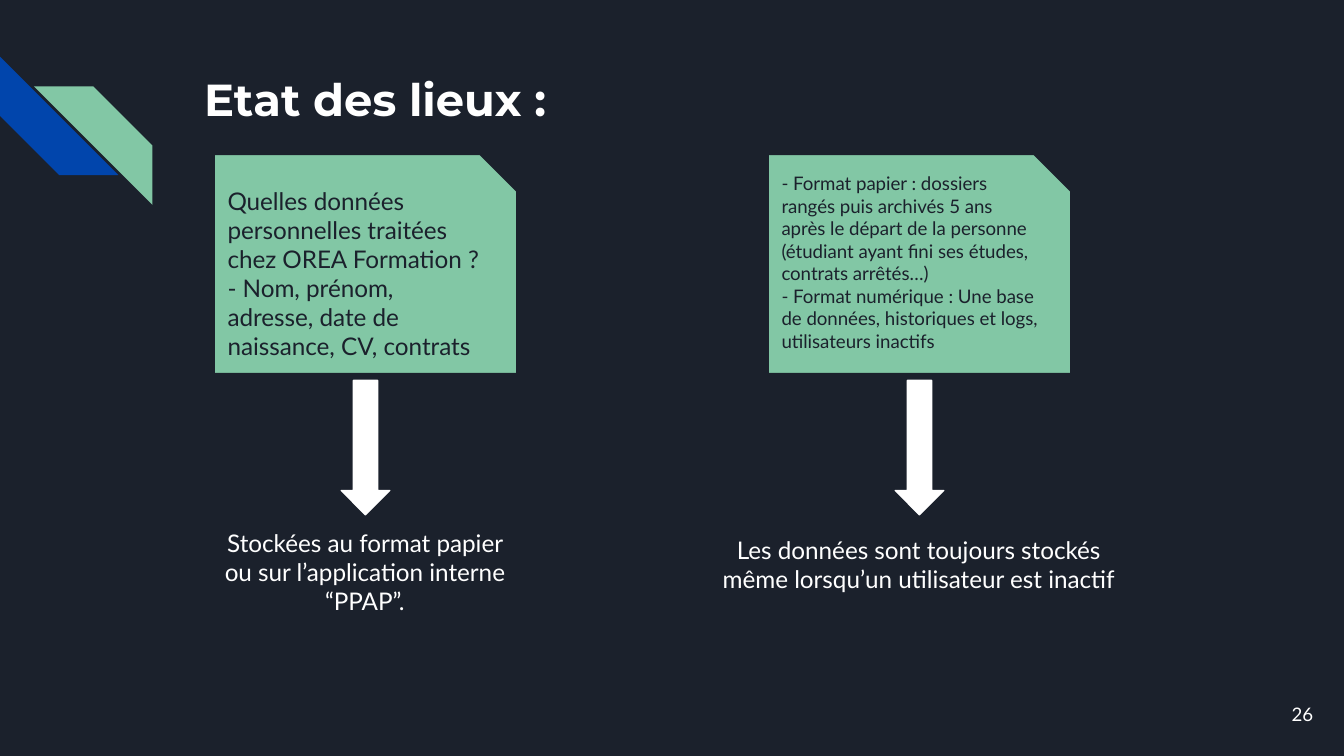
from pptx import Presentation
from pptx.dml.color import RGBColor
from pptx.enum.shapes import MSO_SHAPE as Shape
from pptx.enum.text import MSO_ANCHOR as Anchor, PP_ALIGN as Align
from pptx.util import Pt

NAVY = RGBColor(0x1B, 0x21, 0x2C)
BLUE = RGBColor(0x01, 0x45, 0xAC)
GREEN = RGBColor(0x82, 0xC7, 0xA5)
WHITE = RGBColor(0xFF, 0xFF, 0xFF)

CARD_TOP, CARD_W, CARD_H = 82.8, 162, 117.4
ARROW_TOP, ARROW_W, ARROW_H = 203.8, 26, 72
INSET = 7.2


def box(left, top, width, height):
    return Pt(left), Pt(top), Pt(width), Pt(height)


def write(tf, paragraphs, size, color, align=Align.LEFT, anchor=Anchor.TOP,
          font="Lato", bold=False, bottom=INSET):
    tf.word_wrap = True
    tf.vertical_anchor = anchor
    tf.margin_left = tf.margin_right = tf.margin_top = Pt(INSET)
    tf.margin_bottom = Pt(bottom)
    for i, text in enumerate(paragraphs):
        p = tf.add_paragraph() if i else tf.paragraphs[0]
        p.text = text
        p.alignment = align
        p.font.name = font
        p.font.size = Pt(size)
        p.font.bold = bold
        p.font.color.rgb = color


def add_shape(s, kind, at, fill, line=None):
    sp = s.shapes.add_shape(kind, *box(*at))
    sp.shadow.inherit = False
    sp.fill.solid()
    sp.fill.fore_color.rgb = fill
    if line is None:
        sp.line.fill.background()
    else:
        sp.line.color.rgb = line
        sp.line.width = Pt(0.75)
    return sp


def add_stripe(s, left, top, rotation, color):
    sp = add_shape(s, Shape.DIAGONAL_STRIPE, (left, top, 63.5, 63.5), color)
    sp.rotation = rotation


def add_title(s, text):
    sp = s.shapes.title
    sp.left, sp.top, sp.width, sp.height = box(102.2, 31, 554.4, 72)
    write(sp.text_frame, [text], 24, WHITE, font="Montserrat", bold=True)


def add_text(s, at, text, size, align, anchor=Anchor.TOP):
    sp = s.shapes.add_textbox(*box(*at))
    write(sp.text_frame, [text], size, WHITE, align, anchor)


def add_card(s, left, paragraphs, size, bottom=INSET):
    sp = add_shape(s, Shape.SNIP_1_RECTANGLE,
                   (left, CARD_TOP, CARD_W, CARD_H), GREEN, NAVY)
    write(sp.text_frame, paragraphs, size, NAVY, anchor=Anchor.MIDDLE,
          bottom=bottom)


def add_arrow(s, card_left):
    left = card_left + (CARD_W - ARROW_W) / 2
    add_shape(s, Shape.DOWN_ARROW, (left, ARROW_TOP, ARROW_W, ARROW_H),
              WHITE, WHITE)


def main():
    prs = Presentation()
    prs.slide_width, prs.slide_height = Pt(720), Pt(405)
    s = prs.slides.add_slide(prs.slide_layouts[5])
    s.background.fill.solid()
    s.background.fill.fore_color.rgb = NAVY

    add_stripe(s, 0, 30.3, 270, BLUE)
    add_stripe(s, 18.2, 46.3, 90, GREEN)
    add_title(s, "Etat des lieux :")
    add_text(s, (667.4, 367.2, 43.2, 31), "26", 10, Align.RIGHT, Anchor.MIDDLE)

    data_left, format_left = 114.8, 411.6
    add_card(s, data_left, [
        "Quelles données personnelles traitées chez OREA Formation ?\n"
        "- Nom, prénom, adresse, date de naissance, CV, contrats",
    ], 13)
    add_card(s, format_left, [
        "- Format papier : dossiers rangés puis archivés 5 ans après le départ "
        "de la personne (étudiant ayant fini ses études, contrats arrêtés…)",
        "- Format numérique : Une base de données, historiques et logs, "
        "utilisateurs inactifs",
    ], 10, bottom=19.2)

    add_text(s, (109.4, 275.8, 172.1, 144.7),
             "Stockées au format papier ou sur l’application interne “PPAP”.",
             13, Align.CENTER)
    add_text(s, (374.4, 279.4, 235.4, 149.8),
             "Les données sont toujours stockés même lorsqu’un utilisateur "
             "est inactif", 13, Align.CENTER)
    for left in (data_left, format_left):
        add_arrow(s, left)

    prs.save("out.pptx")


if __name__ == "__main__":
    main()
